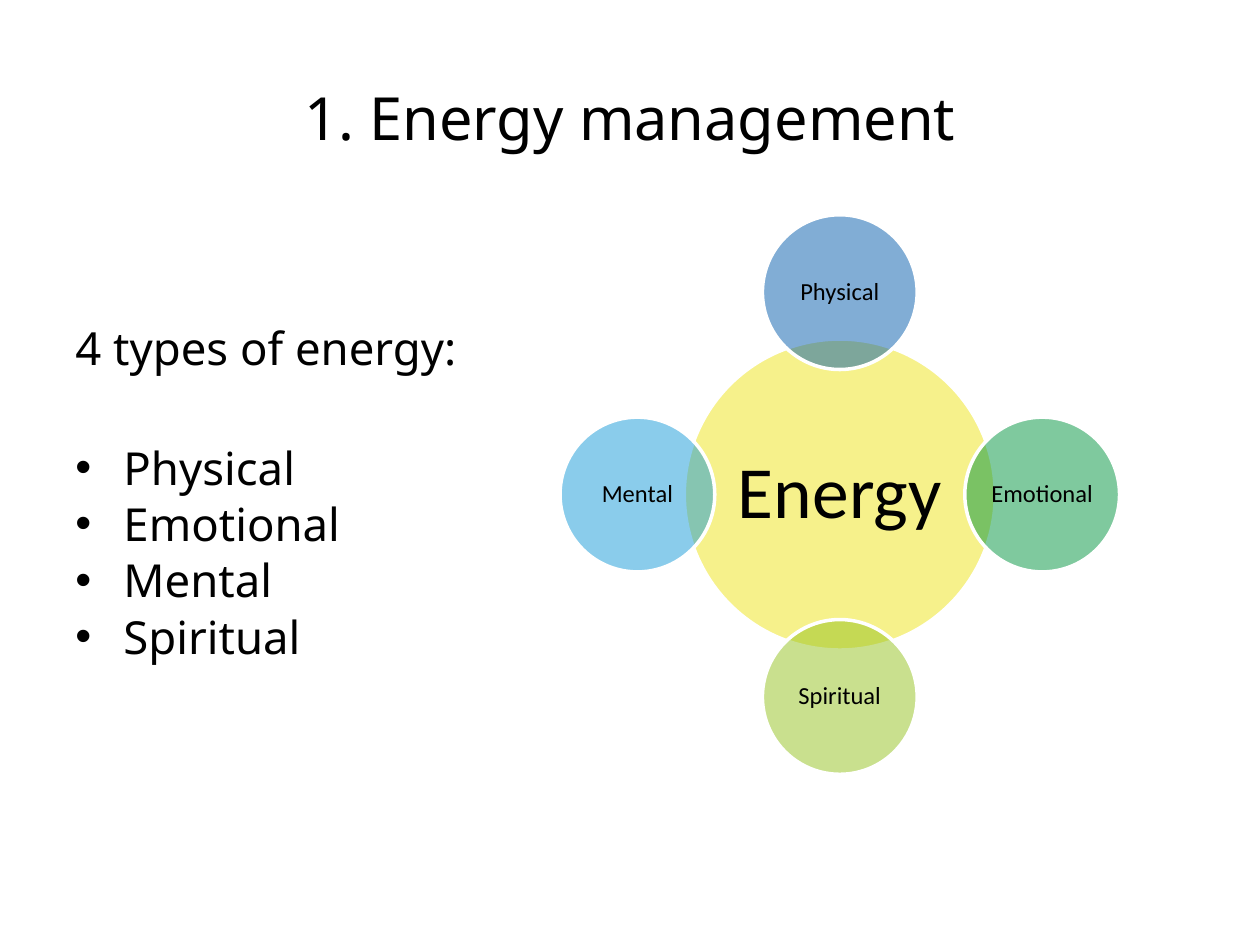
"""Build the energy management slide with a ring of four circles."""
import pptx
import pptx.util
import pptx.dml.color
import pptx.enum.shapes
import pptx.enum.text
import pptx.oxml.xmlchemy
from pptx.util import Cm

Pt = pptx.util.Pt
CENTER = pptx.enum.text.PP_ALIGN.CENTER
MIDDLE = pptx.enum.text.MSO_ANCHOR.MIDDLE


def style(font, name, size):
    font.name = name
    font.size = Pt(size)
    font.color.rgb = color("000000")


def color(code):
    return pptx.dml.color.RGBColor.from_string(code)


deck = pptx.Presentation()
deck.slide_width, deck.slide_height = Cm(25.4), Cm(19.05)
slide = deck.slides.add_slide(deck.slide_layouts[6])

title = slide.shapes.add_textbox(Cm(1.27), Cm(0.76), Cm(22.86), Cm(3.18)).text_frame
title.word_wrap = True
title.vertical_anchor = MIDDLE
title.text = "1. Energy management"
title.paragraphs[0].alignment = CENTER
style(title.paragraphs[0].font, "Noto Sans", 34)

body = slide.shapes.add_textbox(Cm(1.27), Cm(6.32), Cm(22.86), Cm(10.69)).text_frame
body.word_wrap = True
body.text = "4 types of energy:"
style(body.paragraphs[0].font, "Noto Sans", 26)
for rank, kind in enumerate(["Physical", "Emotional", "Mental", "Spiritual"]):
    para = body.add_paragraph()
    para.text = kind
    props = para._p.get_or_add_pPr()
    props.set("marL", str(Cm(0.97)))
    props.set("indent", str(-Cm(0.97)))
    font = pptx.oxml.xmlchemy.OxmlElement("a:buFont")
    font.set("typeface", "Arial")
    mark = pptx.oxml.xmlchemy.OxmlElement("a:buChar")
    mark.set("char", "•")
    props.extend([font, mark])
    para.space_before = Pt(1 if rank else 37.4)
    style(para.font, "Noto Sans", 26)

mid_x, mid_y, reach = 16.93, 9.97, 4.08
rings = [
    ("Energy", "EFE519", 0, 0, 6.27, 42),
    ("Physical", "055CAC", 0, -1, 3.12, 14),
    ("Emotional", "00953F", 1, 0, 3.12, 14),
    ("Spiritual", "95C21F", 0, 1, 3.12, 14),
    ("Mental", "179AD8", -1, 0, 3.12, 14),
]
for label, tint, col, row, wide, size in rings:
    left = mid_x + col * reach - wide / 2
    top = mid_y + row * reach - wide / 2
    ring = slide.shapes.add_shape(
        pptx.enum.shapes.MSO_SHAPE.OVAL, Cm(left), Cm(top), Cm(wide), Cm(wide))
    ring.shadow.inherit = False
    ring.fill.solid()
    ring.fill.fore_color.rgb = color(tint)
    alpha = pptx.oxml.xmlchemy.OxmlElement("a:alpha")
    alpha.set("val", "50000")
    ring.fill._xPr.solidFill[0].append(alpha)
    ring.line.color.rgb = color("FFFFFF")
    ring.line.width = Pt(2)
    frame = ring.text_frame
    frame.margin_left = frame.margin_right = Cm(0.05)
    frame.margin_top = frame.margin_bottom = Cm(0.05)
    frame.word_wrap = False
    frame.vertical_anchor = MIDDLE
    frame.text = label
    para = frame.paragraphs[0]
    para.alignment = CENTER
    para.line_spacing = 0.9
    style(para.font, "Calibri", size)

deck.save("out.pptx")
